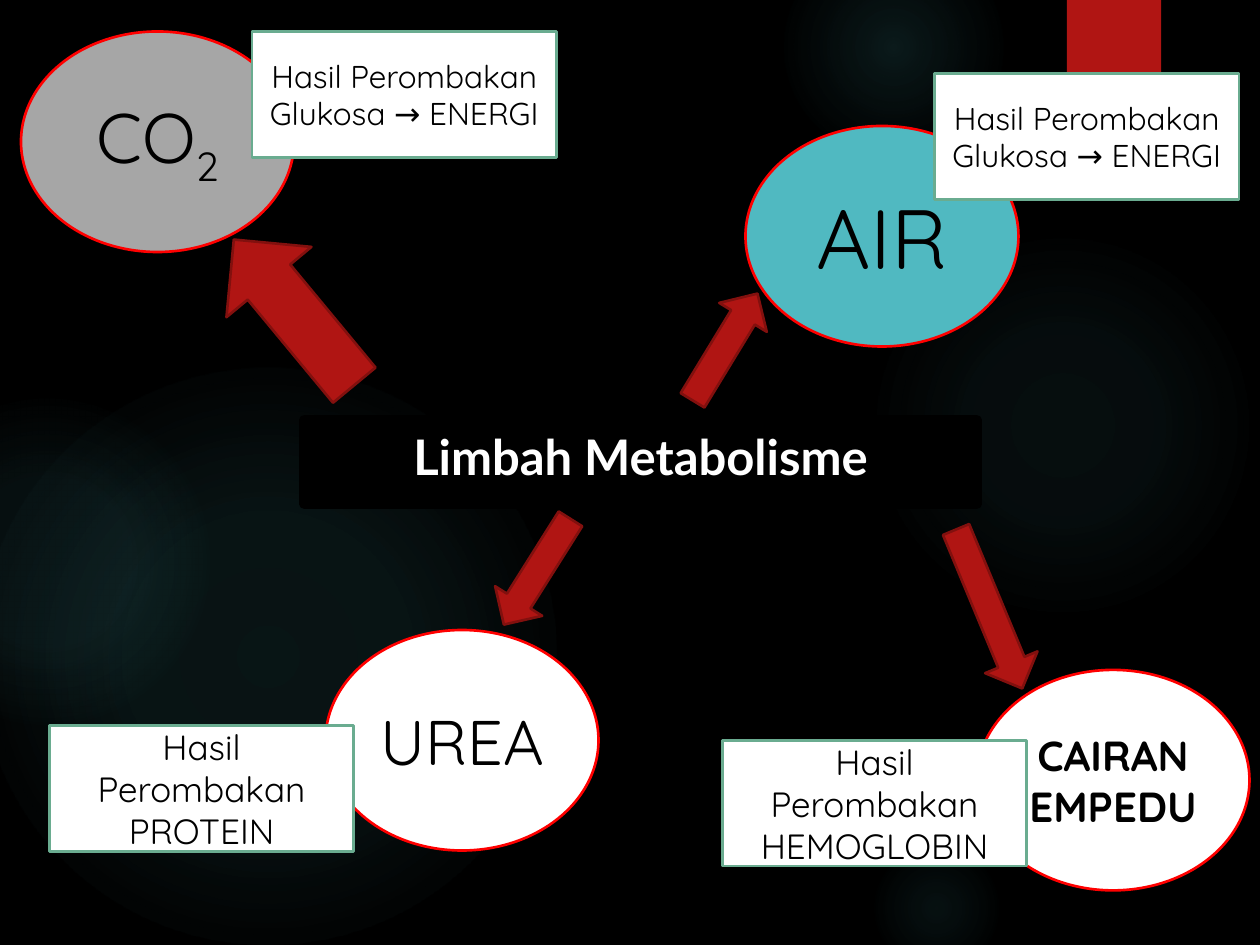
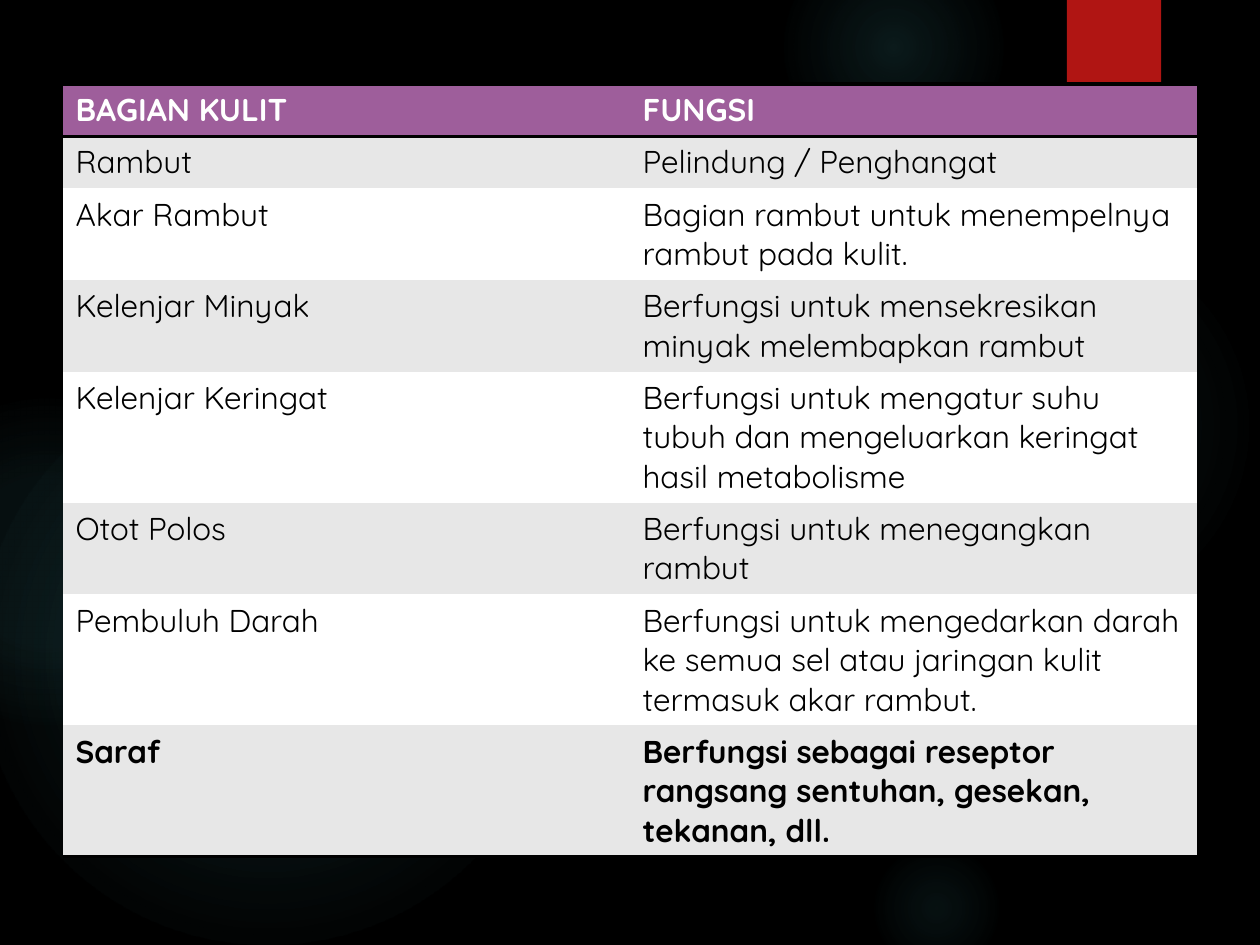
from lxml.etree import SubElement
from pptx import Presentation
from pptx.dml.color import RGBColor
from pptx.enum.shapes import MSO_SHAPE
from pptx.enum.text import MSO_ANCHOR, PP_ALIGN
from pptx.oxml import parse_xml
from pptx.oxml.ns import nsdecls, qn
from pptx.util import Pt

PX = 7620  # 120 px to the inch
BLACK, WHITE, GREY = "000000", "FFFFFF", "E7E7E7"
RED, TEAL, PURPLE = "B01513", "50B9C1", "9E5E9B"
BODY_FONT, TITLE_FONT = "Quicksand", "Lato"
NO_GRID_STYLE = "{2D5ABB26-0587-4C30-8999-92F81FD0307C}"


def color(value):
    return RGBColor.from_string(value)


def add_shape(slide, kind, box, fill, line=None, width=1.5, text="", size=18,
              font=BODY_FONT, ink=BLACK, bold=False):
    shape = slide.shapes.add_shape(kind, *(value * PX for value in box))
    shape.shadow.inherit = False
    shape.fill.solid()
    shape.fill.fore_color.rgb = color(fill)
    if line:
        shape.line.color.rgb = color(line)
        shape.line.width = Pt(width)
    else:
        shape.line.fill.background()
    if text:
        paragraph = shape.text_frame.paragraphs[0]
        paragraph.text = text
        paragraph.alignment = PP_ALIGN.CENTER
        paragraph.font.name, paragraph.font.size = font, Pt(size)
        paragraph.font.bold, paragraph.font.color.rgb = bold, color(ink)
    return shape


presentation = Presentation()
presentation.slide_width, presentation.slide_height = 1200 * PX, 900 * PX
blank = presentation.slide_layouts[6]
waste_slide, skin_slide = [presentation.slides.add_slide(blank) for _ in range(2)]

# Shared backdrop: left, top, diameter, then (position %, opacity %) stops
glows = [
    (827, 220, 370, [(0, 7), (36, 6), (69, 0)]),
    (746, -60, 210, [(0, 14), (36, 7), (73, 0)]),
    (827, 800, 130, [(0, 9), (36, 5), (66, 0)]),
    (-20, 350, 550, [(0, 11), (36, 10), (75, 0)]),
    (-110, 380, 310, [(0, 8), (36, 8), (72, 0)]),
]
for slide in (waste_slide, skin_slide):
    slide.background.fill.solid()
    slide.background.fill.fore_color.rgb = color(BLACK)
    for left, top, diameter, stops in glows:
        glow = add_shape(slide, MSO_SHAPE.OVAL, (left, top, diameter, diameter), TEAL)
        stop_xml = "".join(
            f'<a:gs pos="{position * 1000}"><a:srgbClr val="{TEAL}">'
            f'<a:alpha val="{opacity * 1000}"/></a:srgbClr></a:gs>'
            for position, opacity in stops)
        gradient = parse_xml(
            f'<a:gradFill {nsdecls("a")}><a:gsLst>{stop_xml}</a:gsLst><a:path path="circle">'
            '<a:fillToRect l="50000" t="50000" r="50000" b="50000"/></a:path></a:gradFill>')
        properties = glow._element.spPr
        properties.replace(properties.find(qn("a:solidFill")), gradient)
    add_shape(slide, MSO_SHAPE.RECTANGLE, (1016, 0, 90, 144), RED)

# Waste products
wastes = [
    (20, 30, "A6A6A6", "CO", 40, False),
    (310, 600, WHITE, "UREA", 36, False),
    (710, 120, TEAL, "AIR", 48, False),
    (930, 638, WHITE, "CAIRAN\vEMPEDU", 24, True),
]
for left, top, fill, text, size, bold in wastes:
    oval = add_shape(waste_slide, MSO_SHAPE.OVAL, (left, top, 260, 210), fill,
                     "FF0000", text=text, size=size, bold=bold)
    if text == "CO":
        subscript = oval.text_frame.paragraphs[0].add_run()
        subscript.text = "2"
        subscript._r.get_or_add_rPr().set("baseline", "-25000")

# Where each waste comes from
sources = [
    (240, 30, "Hasil Perombakan Glukosa → ENERGI", 18),
    (890, 70, "Hasil Perombakan Glukosa → ENERGI", 18),
    (47, 691, "Hasil Perombakan PROTEIN", 20),
    (688, 705, "Hasil Perombakan HEMOGLOBIN", 20),
]
for left, top, text, size in sources:
    add_shape(waste_slide, MSO_SHAPE.RECTANGLE, (left, top, 290, 120), WHITE,
              "6AAC90", text=text, size=size)

# Central title and its arrows
title = add_shape(waste_slide, MSO_SHAPE.RECTANGLE, (290, 400, 640, 80), BLACK, BLACK, 6,
                  "Limbah Metabolisme", 28, TITLE_FONT, WHITE, True)
title.text_frame.vertical_anchor = MSO_ANCHOR.TOP
arrows = [
    ((190, 245, 180, 105), 230.4),
    ((631, 304, 119, 53), 301.3),
    ((452, 518, 119, 53), 122.2),
    ((860, 553, 164, 54), 67.4),
]
for box, rotation in arrows:
    arrow = add_shape(waste_slide, MSO_SHAPE.RIGHT_ARROW, box, RED, "82100E")
    arrow.rotation = rotation

# Table of skin parts
skin_parts = [
    ("BAGIAN KULIT", "FUNGSI"),
    ("Rambut", "Pelindung / Penghangat"),
    ("Akar Rambut", "Bagian rambut untuk menempelnya rambut pada kulit."),
    ("Kelenjar Minyak", "Berfungsi untuk mensekresikan minyak melembapkan rambut"),
    ("Kelenjar Keringat", "Berfungsi untuk mengatur suhu tubuh dan mengeluarkan "
                          "keringat hasil metabolisme"),
    ("Otot Polos", "Berfungsi untuk menegangkan rambut"),
    ("Pembuluh Darah", "Berfungsi untuk mengedarkan darah ke semua sel atau "
                       "jaringan kulit termasuk akar rambut."),
    ("Saraf", "Berfungsi sebagai reseptor rangsang sentuhan, gesekan, tekanan, dll."),
]
last = len(skin_parts) - 1
frame = skin_slide.shapes.add_table(len(skin_parts), 2, 60 * PX, 80 * PX,
                                    1080 * PX, len(skin_parts) * 49 * PX)
next(frame._element.iter(qn("a:tableStyleId"))).text = NO_GRID_STYLE
for row, texts in enumerate(skin_parts):
    for column, text in enumerate(texts):
        cell = frame.table.cell(row, column)
        paragraph = cell.text_frame.paragraphs[0]
        paragraph.text = text
        paragraph.font.name, paragraph.font.size = BODY_FONT, Pt(18)
        paragraph.font.bold = row in (0, last)
        paragraph.font.color.rgb = color(BLACK if row else WHITE)

        # Black rules around the header and under the last row
        edges = {0: ("a:lnT", "a:lnB"), last: ("a:lnB",)}.get(row, ())
        for edge in edges:
            rule = SubElement(cell._tc.get_or_add_tcPr(), qn(edge), w=str(Pt(2)))
            SubElement(SubElement(rule, qn("a:solidFill")), qn("a:srgbClr"), val=BLACK)
        cell.fill.solid()
        cell.fill.fore_color.rgb = color((GREY if row % 2 else WHITE) if row else PURPLE)

presentation.save("out.pptx")
